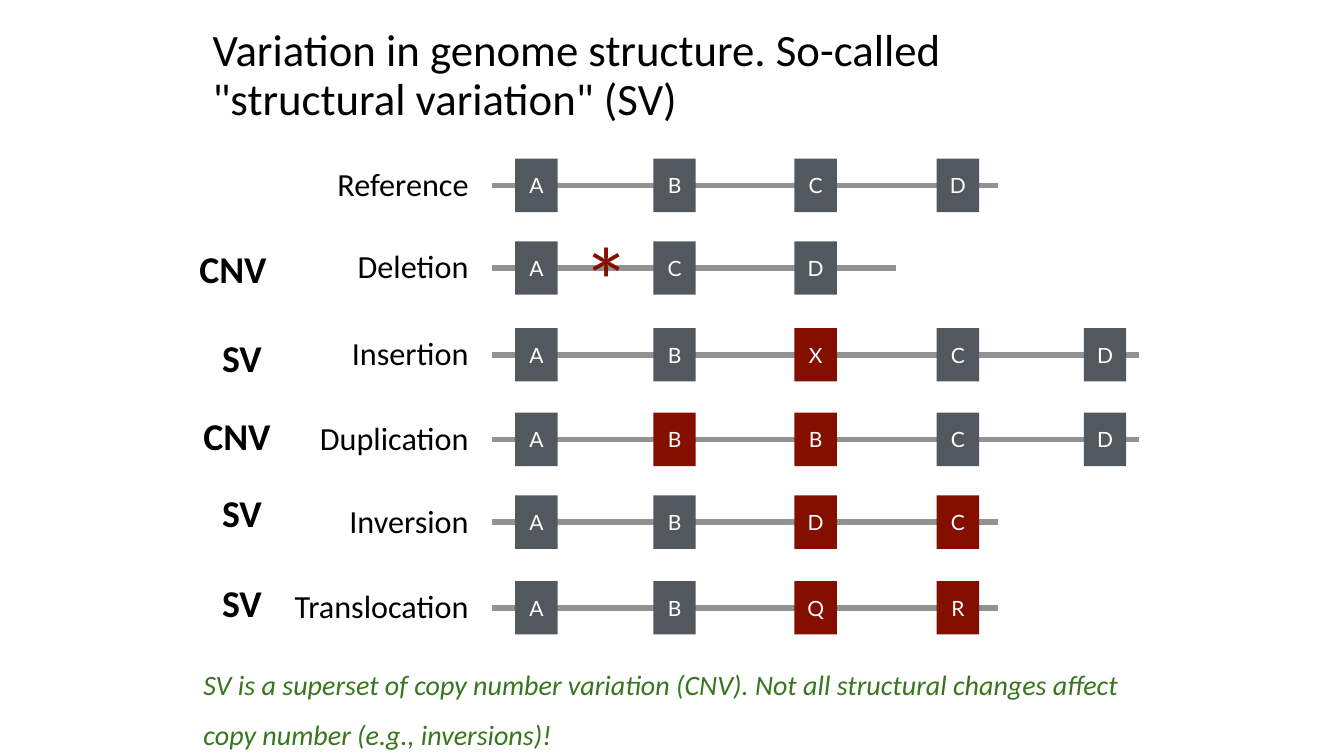
from pptx import Presentation
from pptx.dml.color import RGBColor
from pptx.enum.shapes import MSO_CONNECTOR, MSO_SHAPE
from pptx.enum.text import MSO_ANCHOR, PP_ALIGN
from pptx.oxml.ns import qn
from pptx.util import Inches, Pt
from lxml.etree import SubElement

THEME = {
    "ink": RGBColor.from_string("000000"),
    "gene": RGBColor.from_string("53585F"),
    "changed": RGBColor.from_string("840F00"),
    "strand": RGBColor.from_string("929292"),
    "gene_text": RGBColor.from_string("FFFFFF"),
    "note": RGBColor.from_string("38761D"),
    "body_font": "Calibri", "gene_font": "Lato",
    "title_size": 32, "class_size": 27, "label_size": 23,
    "note_size": 20, "gene_size": 15, "star_size": 64, "strand_width": 4,
}

# Grid: gene columns, strand start, and strand end by number of genes
GENE_LEFTS = [5.11, 6.48, 7.88, 9.29, 10.75]
GENE_WIDTH, GENE_HEIGHT = 0.42, 0.53
STRAND_START = 4.88
STRAND_ENDS = {3: 8.89, 4: 9.9, 5: 11.3}
LABEL_LEFT, LABEL_WIDTH, LABEL_HEIGHT = 1.88, 2.81, 0.51
CLASS_WIDTH, CLASS_HEIGHT = 0.94, 0.41

# Label, strand height, genes, changed genes, class, class centre (x, y)
ROWS = [
    ("Reference", 1.84, "ABCD", "", None, None),
    ("Deletion", 2.66, "ACD", "", "CNV", (2.31, 2.66)),
    ("Insertion", 3.52, "ABXCD", "X", "SV", (2.4, 3.55)),
    ("Duplication", 4.36, "ABBCD", "B", "CNV", (2.35, 4.32)),
    ("Inversion", 5.18, "ABDC", "DC", "SV", (2.4, 5.08)),
    ("Translocation", 6.03, "ABQR", "QR", "SV", (2.4, 5.98)),
]


def write(shape, text, size, color="ink", font="body_font", align=PP_ALIGN.CENTER,
          anchor=MSO_ANCHOR.MIDDLE, inset=0.04, spacing=1.0, **style):
    frame = shape.text_frame
    frame_format = {"word_wrap": True, "vertical_anchor": anchor}
    frame_format.update({f"margin_{side}": Inches(inset)
                         for side in ("left", "top", "right", "bottom")})
    for name, value in frame_format.items():
        setattr(frame, name, value)
    paragraph = frame.paragraphs[0]
    paragraph.text = text
    paragraph.alignment = align
    paragraph.line_spacing = spacing
    run_font = paragraph.runs[0].font
    font_format = {"name": THEME[font], "size": Pt(THEME[size]), **style}
    for name, value in font_format.items():
        setattr(run_font, name, value)
    run_font.color.rgb = THEME[color]


def add_text(left, top, width, height, text, size, **text_format):
    box = slide.shapes.add_textbox(Inches(left), Inches(top), Inches(width), Inches(height))
    write(box, text, size, **text_format)


presentation = Presentation()
presentation.slide_width, presentation.slide_height = Inches(13.33), Inches(7.5)
slide = presentation.slides.add_slide(presentation.slide_layouts[6])

# Title
add_text(2.01, 0.13, 9.32, 1.21,
         'Variation in genome structure. So-called "structural variation" (SV)',
         "title_size", align=PP_ALIGN.LEFT, anchor=MSO_ANCHOR.BOTTOM, inset=0.1, spacing=0.9)

for label, strand_y, genes, changed, variant_class, class_centre in ROWS:
    # Strand
    strand = slide.shapes.add_connector(
        MSO_CONNECTOR.STRAIGHT, Inches(STRAND_START), Inches(strand_y),
        Inches(STRAND_ENDS[len(genes)]), Inches(strand_y))
    strand.line.color.rgb = THEME["strand"]
    strand.line.width = Pt(THEME["strand_width"])
    SubElement(strand._element.spPr, qn("a:effectLst"))

    # Genes
    for gene, left in zip(genes, GENE_LEFTS):
        block = slide.shapes.add_shape(
            MSO_SHAPE.RECTANGLE, Inches(left), Inches(strand_y - GENE_HEIGHT / 2),
            Inches(GENE_WIDTH), Inches(GENE_HEIGHT))
        block.shadow.inherit = False
        block.fill.solid()
        block.fill.fore_color.rgb = THEME["changed" if gene in changed else "gene"]
        block.line.fill.background()
        write(block, gene, "gene_size", color="gene_text", font="gene_font")

    # Row label and variation class
    add_text(LABEL_LEFT, strand_y - 0.02 - LABEL_HEIGHT / 2, LABEL_WIDTH, LABEL_HEIGHT,
             label, "label_size", align=PP_ALIGN.RIGHT)
    if variant_class:
        centre_x, centre_y = class_centre
        add_text(centre_x - CLASS_WIDTH / 2, centre_y - CLASS_HEIGHT / 2,
                 CLASS_WIDTH, CLASS_HEIGHT, variant_class, "class_size", bold=True)

# Deletion mark
add_text(5.77, 2.24, 0.49, 1.06, "*", "star_size", color="changed", font="gene_font")

# Closing note
add_text(1.92, 6.65, 9.77, 0.61,
         "SV is a superset of copy number variation (CNV). Not all structural changes "
         "affect copy number (e.g., inversions)!",
         "note_size", color="note", align=PP_ALIGN.LEFT, inset=0.1, spacing=1.5, italic=True)

presentation.save("out.pptx")
